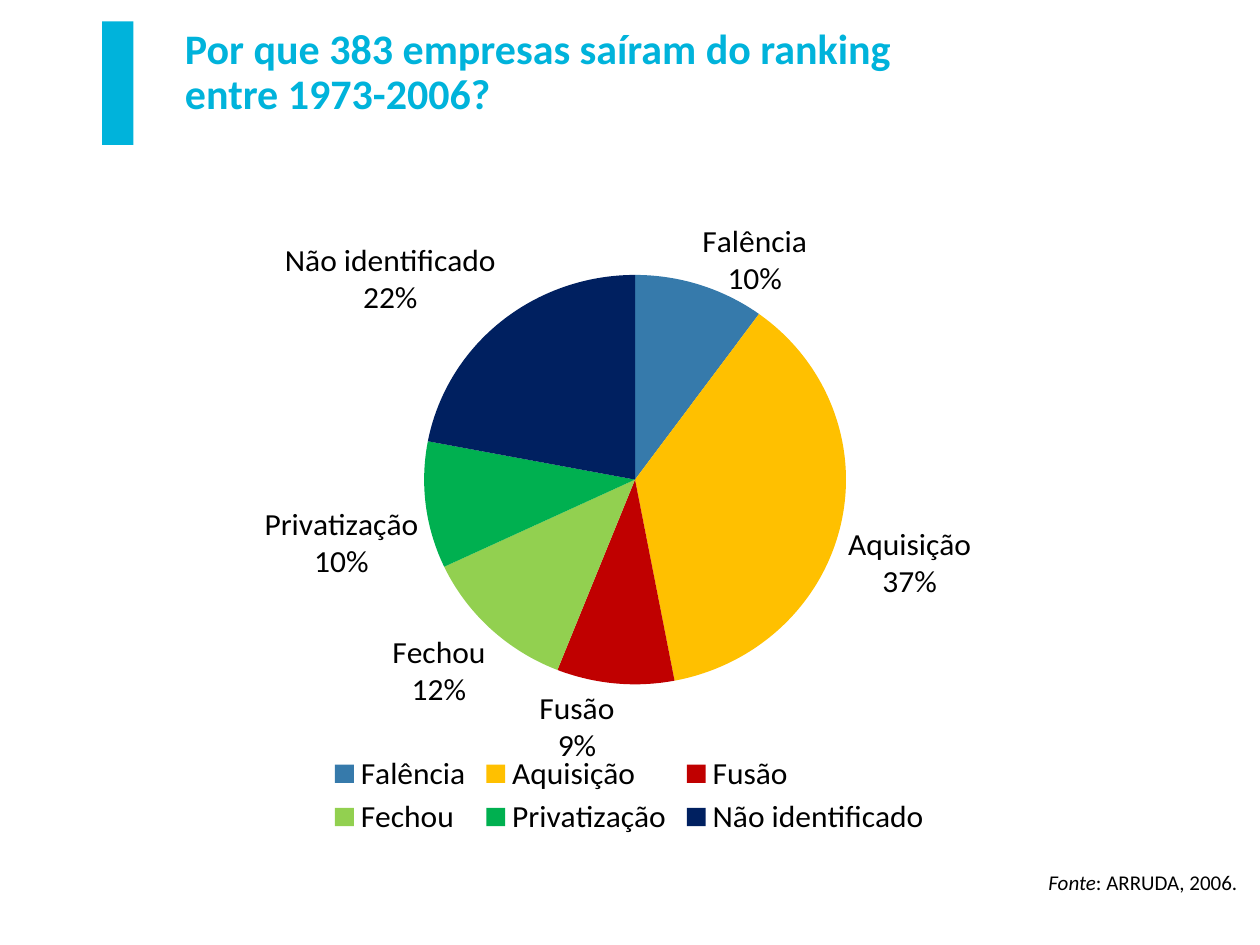
import pptx
import pptx.chart.data
import pptx.dml.color
import pptx.enum.chart
import pptx.enum.shapes
import pptx.enum.text
import pptx.oxml
import pptx.oxml.ns
import pptx.util
from pptx.util import Inches

COLORS = {
    "accent": "00B3DB",
    "text": "000000",
    "Falência": "367AAB",
    "Aquisição": "FFC000",
    "Fusão": "C00000",
    "Fechou": "92D050",
    "Privatização": "00B050",
    "Não identificado": "002060",
}
REASONS = {
    "Falência": 10,
    "Aquisição": 37,
    "Fusão": 9,
    "Fechou": 12,
    "Privatização": 10,
    "Não identificado": 22,
}


class SlideBuilder:
    """Hold the style and the current slide, and add elements to it."""

    font_name = "Calibri"

    def __init__(self, slide):
        self.slide = slide

    def color(self, name):
        return pptx.dml.color.RGBColor.from_string(COLORS[name])

    def style(self, font, size, color):
        font.name = self.font_name
        font.size = pptx.util.Pt(size)
        font.color.rgb = self.color(color)

    def fill(self, element, color):
        element.fill.solid()
        element.fill.fore_color.rgb = self.color(color)

    def bar(self, box, color):
        shape = self.slide.shapes.add_shape(pptx.enum.shapes.MSO_SHAPE.RECTANGLE, *box)
        shape.shadow.inherit = False
        self.fill(shape, color)
        shape.line.fill.background()

    def text(self, box, lines, size, color, align="LEFT", anchor="TOP", spacing=1.0):
        frame = self.slide.shapes.add_textbox(*box).text_frame
        frame.word_wrap = True
        frame.vertical_anchor = pptx.enum.text.MSO_ANCHOR[anchor]
        paragraph = frame.paragraphs[0]
        paragraph.alignment = pptx.enum.text.PP_ALIGN[align]
        paragraph.line_spacing = spacing
        for index, line in enumerate(lines):
            if index:
                paragraph.add_line_break()
            for content, emphasis in line:
                run = paragraph.add_run()
                run.text = content
                self.style(run.font, size, color)
                run.font.bold = emphasis == "bold"
                run.font.italic = emphasis == "italic"

    def pie(self, box, values, size, layout):
        data = pptx.chart.data.CategoryChartData(number_format="0")
        data.categories = list(values)
        data.add_series("Series 1", list(values.values()))
        chart = self.slide.shapes.add_chart(
            pptx.enum.chart.XL_CHART_TYPE.PIE, *box, data
        ).chart
        self.style(chart.font, size, "text")
        chart.has_title = False
        chart.has_legend = True
        chart.legend.position = pptx.enum.chart.XL_LEGEND_POSITION.BOTTOM
        chart.legend.include_in_layout = False
        self.style(chart.legend.font, size, "text")
        plot = chart.plots[0]
        plot.vary_by_categories = True
        for index, category in enumerate(values):
            self.fill(plot.series[0].points[index].format, category)
        plot.has_data_labels = True
        labels = plot.data_labels
        labels.show_value = False
        labels.show_category_name = True
        labels.show_percentage = True
        labels.number_format = "0%"
        labels.number_format_is_linked = False
        labels.position = pptx.enum.chart.XL_LABEL_POSITION.OUTSIDE_END
        self.style(labels.font, size, "text")
        self.place_plot(chart, layout)

    def place_plot(self, chart, layout):
        area = chart.element.find(".//" + pptx.oxml.ns.qn("c:plotArea"))
        for old in area.findall(pptx.oxml.ns.qn("c:layout")):
            area.remove(old)
        settings = [("layoutTarget", "inner"), ("xMode", "edge"), ("yMode", "edge")]
        settings += zip("xywh", layout)
        tags = "".join(f'<c:{name} val="{value}"/>' for name, value in settings)
        area.insert(0, pptx.oxml.parse_xml(
            f'<c:layout {pptx.oxml.ns.nsdecls("c")}>'
            f"<c:manualLayout>{tags}</c:manualLayout></c:layout>"
        ))


def main():
    presentation = pptx.Presentation()
    presentation.slide_width = Inches(10)
    presentation.slide_height = Inches(7.5)
    builder = SlideBuilder(presentation.slides.add_slide(presentation.slide_layouts[6]))

    title = [
        [("Por que 383 empresas saíram do ranking", "bold")],
        [("entre 1973-2006?", "bold")],
    ]
    title_box = Inches(1.37), Inches(0.09), Inches(8.5), Inches(0.98)
    builder.text(title_box, title, 24, "accent", anchor="MIDDLE", spacing=0.9)
    builder.bar((Inches(0.81), Inches(0.17), Inches(0.25), Inches(0.98)), "accent")

    credit = [[("Fonte", "italic"), (": ARRUDA, 2006.", None)]]
    credit_box = Inches(5.55), Inches(6.85), Inches(4.37), Inches(0.33)
    builder.text(credit_box, credit, 12, "text", align="RIGHT")

    chart_box = Inches(0.47), Inches(1.62), Inches(9.05), Inches(5.06)
    builder.pie(chart_box, REASONS, 18, (0.32, 0.08, 0.37, 0.67))
    presentation.save("out.pptx")


if __name__ == "__main__":
    main()
